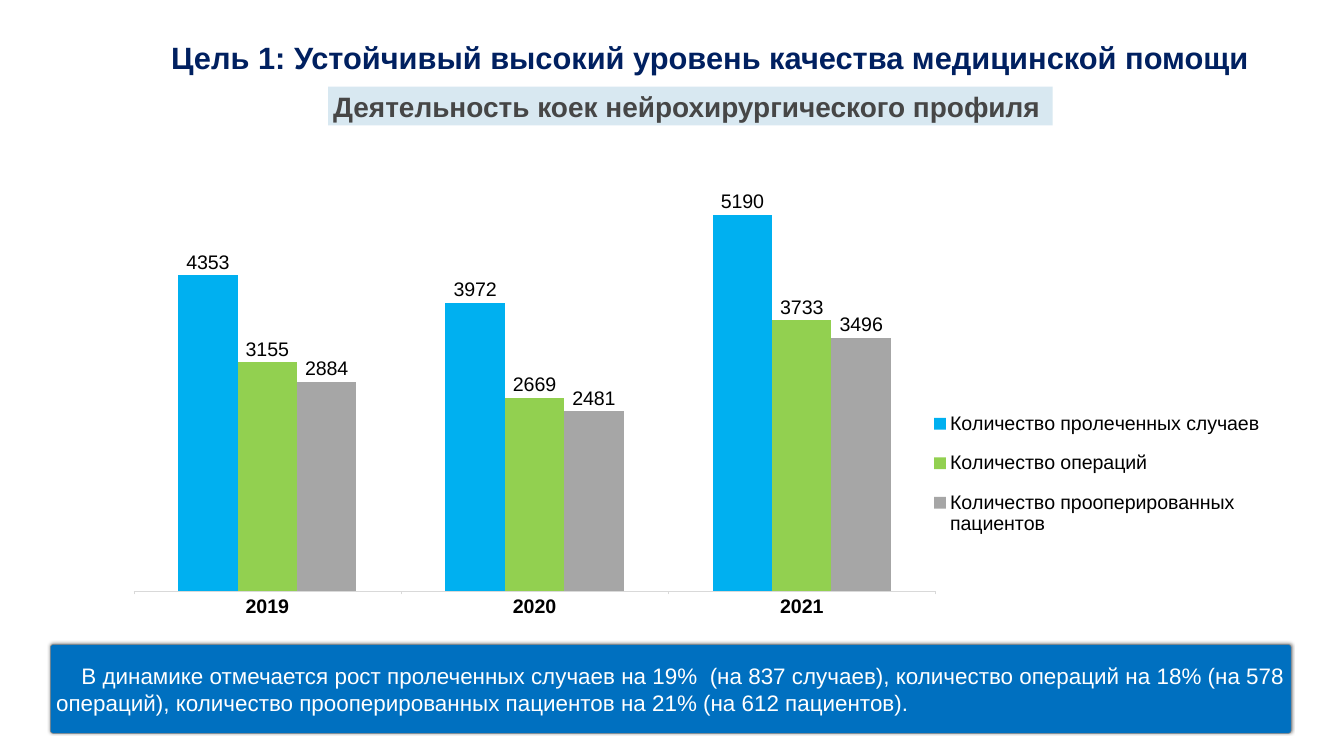
"""Builds the slide on the work of neurosurgical beds."""
from lxml import etree
from pptx import Presentation
from pptx.chart import data
from pptx.dml import color
from pptx.enum import chart as charts, shapes, text
from pptx.oxml import ns
from pptx.util import Inches, Pt

WIDTH, HEIGHT = 26.66, 15
FONT = "Arial"
COLORS = {
    "title": "002060", "subtitle": "464646", "subtitle_fill": "D8E8F1",
    "summary": "FFFFFF", "summary_fill": "0070C0", "summary_line": "838383",
    "shadow": "000000", "label": "000000", "axis": "D9D9D9",
}
YEARS = ["2019", "2020", "2021"]
SERIES = [
    ("Количество пролеченных случаев", [4353, 3972, 5190], "00B0F0"),
    ("Количество операций", [3155, 2669, 3733], "92D050"),
    ("Количество прооперированных пациентов", [2884, 2481, 3496], "A6A6A6"),
]
TITLE = "Цель 1: Устойчивый высокий уровень качества медицинской помощи"
SUBTITLE = "Деятельность коек нейрохирургического профиля"
SUMMARY = (
    "В динамике отмечается рост пролеченных случаев на 19%  (на 837 случаев), "
    "количество операций на 18% (на 578 операций), "
    "количество прооперированных пациентов на 21% (на 612 пациентов)."
)


def rgb(name):
    """Return the named colour."""
    return color.RGBColor.from_string(COLORS[name])


def style_font(font, size, name, bold=False):
    """Set the typeface, size, colour and weight of a font."""
    font.name, font.size, font.bold = FONT, Pt(size), bold
    font.color.rgb = rgb(name)


def add_panel(slide, kind, box, wording, size, name, bold=False, fill=None):
    """Add a shape with one paragraph of text and return it."""
    shape = slide.shapes.add_shape(kind, *map(Inches, box))
    shape.shadow.inherit = False
    shape.line.fill.background()
    if kind == shapes.MSO_SHAPE.ROUNDED_RECTANGLE:
        shape.adjustments[0] = 0.03
    if fill:
        shape.fill.solid()
        shape.fill.fore_color.rgb = rgb(fill)
    else:
        shape.fill.background()
    frame = shape.text_frame
    frame.word_wrap = True
    frame.vertical_anchor = text.MSO_ANCHOR.MIDDLE
    paragraph = frame.paragraphs[0]
    paragraph.text = wording
    paragraph.alignment = text.PP_ALIGN.LEFT
    style_font(paragraph.font, size, name, bold)
    return shape


def add_shadow(shape, blur, distance, angle, opacity):
    """Give a shape a soft outer shadow."""
    effects = shape._element.spPr.find(ns.qn("a:effectLst"))
    shadow = etree.SubElement(
        effects, ns.qn("a:outerShdw"), blurRad=str(Pt(blur)),
        dist=str(Pt(distance)), dir=str(angle * 60000), rotWithShape="0")
    tint = etree.SubElement(shadow, ns.qn("a:srgbClr"), val=COLORS["shadow"])
    etree.SubElement(tint, ns.qn("a:alpha"), val=str(opacity * 1000))


def place(element, shares, inner=False):
    """Fix a chart part at left, top, width and height shares of the chart."""
    for old in element.findall(ns.qn("c:layout")):
        element.remove(old)
    layout = etree.Element(ns.qn("c:layout"))
    manual = etree.SubElement(layout, ns.qn("c:manualLayout"))
    settings = [("layoutTarget", "inner")] if inner else []
    settings += [("xMode", "edge"), ("yMode", "edge")]
    settings += zip("xywh", map(str, shares))
    for tag, value in settings:
        etree.SubElement(manual, ns.qn(f"c:{tag}"), val=value)
    element.insert(0 if inner else 1, layout)


def style_axes(chart):
    """Show the years and hide the value axis."""
    years, values = chart.category_axis, chart.value_axis
    years.major_tick_mark = charts.XL_TICK_MARK.OUTSIDE
    years.format.line.color.rgb = rgb("axis")
    years.format.line.width = Pt(0.25)
    style_font(years.tick_labels.font, 28, "label", True)
    values.visible = values.has_major_gridlines = False
    values.minimum_scale, values.maximum_scale = 0, 6000


def add_column_chart(slide, box):
    """Add the clustered columns with value labels and a legend."""
    chart_data = data.CategoryChartData()
    chart_data.categories = YEARS
    for name, values, _ in SERIES:
        chart_data.add_series(name, values)
    chart = slide.shapes.add_chart(
        charts.XL_CHART_TYPE.COLUMN_CLUSTERED, *map(Inches, box), chart_data).chart
    chart.has_title = False
    style_font(chart.font, 28, "label")
    style_axes(chart)
    plot = chart.plots[0]
    plot.gap_width, plot.overlap, plot.vary_by_categories = 150, 0, False
    for series, (_, _, tint) in zip(plot.series, SERIES):
        series.format.fill.solid()
        series.format.fill.fore_color.rgb = color.RGBColor.from_string(tint)
        labels = series.data_labels
        labels.show_value = True
        labels.position = charts.XL_LABEL_POSITION.OUTSIDE_END
        style_font(labels.font, 28, "label")
    chart.has_legend = True
    chart.legend.position = charts.XL_LEGEND_POSITION.RIGHT
    chart.legend.include_in_layout = False
    style_font(chart.legend.font, 28, "label")
    place(chart._chartSpace.chart.plotArea, (0.02, 0.02, 0.69, 0.91), inner=True)
    place(chart.legend._element, (0.72, 0.52, 0.28, 0.33))


def add_summary(slide, box):
    """Add the summary bar with its shadow and first-line indent."""
    shape = add_panel(slide, shapes.MSO_SHAPE.ROUNDED_RECTANGLE, box, SUMMARY,
                      32, "summary", fill="summary_fill")
    shape.line.color.rgb = rgb("summary_line")
    shape.line.width = Pt(0.75)
    add_shadow(shape, 5, 2, 245, 50)
    paragraph = shape.text_frame.paragraphs[0]
    paragraph.alignment = text.PP_ALIGN.JUSTIFY
    paragraph._p.get_or_add_pPr().set("indent", str(Inches(0.5)))


def main():
    """Build and save the slide."""
    presentation = Presentation()
    presentation.slide_width, presentation.slide_height = Inches(WIDTH), Inches(HEIGHT)
    slide = presentation.slides.add_slide(presentation.slide_layouts[6])
    add_column_chart(slide, (2.19, 2.9, 23.05, 9.5))
    add_panel(slide, shapes.MSO_SHAPE.RECTANGLE, (6.51, 1.72, 14.37, 0.77),
              SUBTITLE, 40, "subtitle", True, "subtitle_fill")
    add_summary(slide, (1, 12.79, 24.61, 1.76))
    add_panel(slide, shapes.MSO_SHAPE.ROUNDED_RECTANGLE, (3.29, 0.78, 21.7, 0.7),
              TITLE, 44, "title", True)
    presentation.save("out.pptx")


if __name__ == "__main__":
    main()
